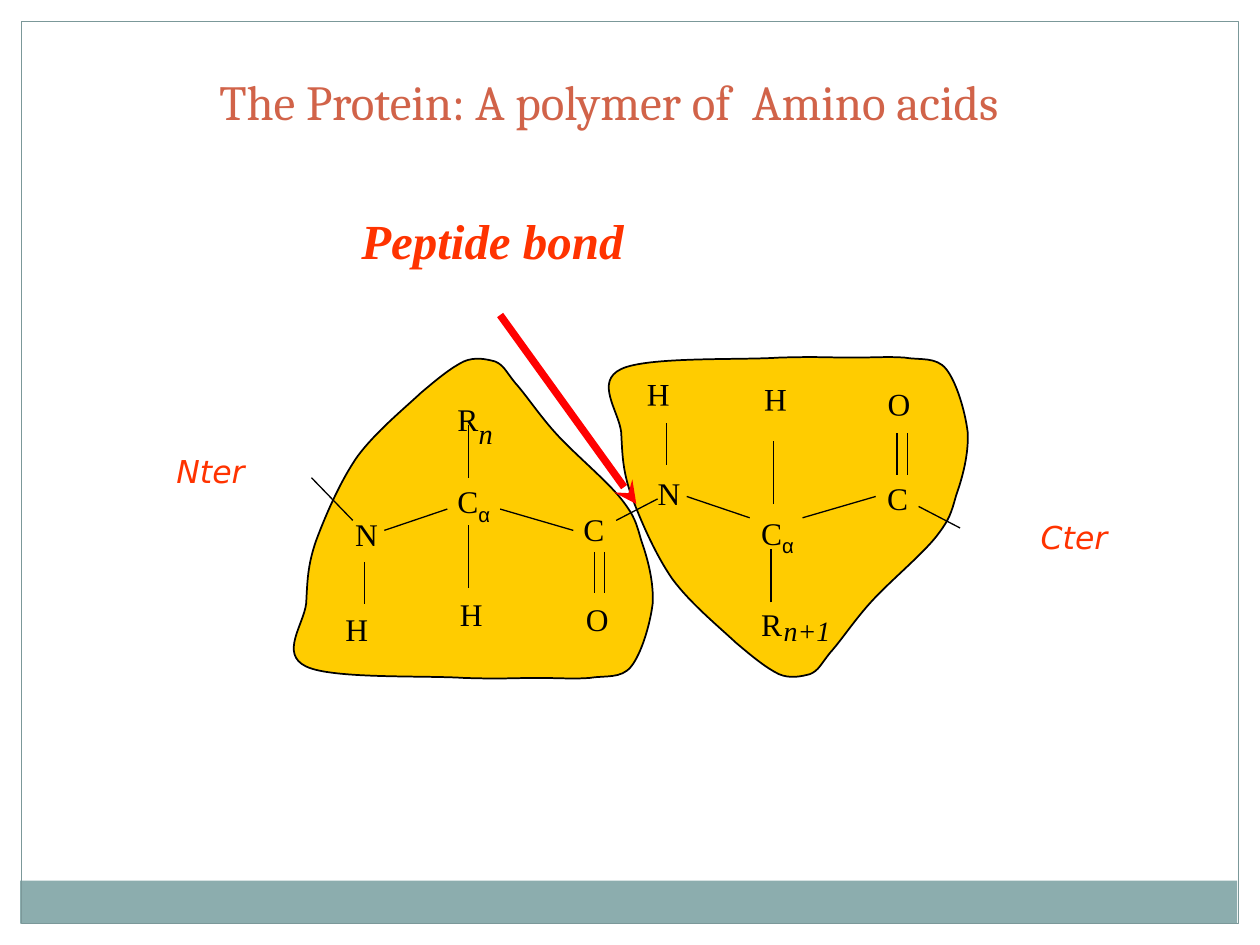
from pptx import Presentation
from pptx.dml.color import RGBColor
from pptx.enum import shapes, text
from pptx.oxml.ns import qn
from pptx.oxml.xmlchemy import OxmlElement
from pptx.util import Pt

TEAL = RGBColor(0x8C, 0xAD, 0xAE)
FRAME = RGBColor(0x7B, 0x98, 0x99)
RUST = RGBColor(0xD1, 0x63, 0x49)
GOLD = RGBColor(0xFF, 0xCC, 0x00)
RED = RGBColor(0xFF, 0x00, 0x00)
ORANGE = RGBColor(0xFF, 0x33, 0x00)
BLACK = RGBColor(0x00, 0x00, 0x00)
SERIF = "Times New Roman"

# Residue outline: a start point, then Bezier triples (control, control, end)
OUTLINE = [
    (265, 206.6),
    (257.8, 210.2), (250.6, 216), (240.5, 224.6),
    (230.4, 234), (214.6, 247), (204.5, 260.6),
    (194.4, 275), (185.8, 295.2), (180.7, 308.9),
    (175.7, 323.3), (175.7, 332.6), (175, 344.9),
    (173.5, 357.1), (159.8, 373.7), (175, 380.9),
    (190.1, 388.1), (242.6, 385.9), (265, 387.4),
    (286.6, 388.1), (294.5, 387.4), (306.7, 387.4),
    (319, 387.4), (327.6, 388.1), (337, 387.4),
    (345.6, 385.9), (355, 388.1), (360.7, 380.9),
    (366.5, 373.7), (371.5, 357.1), (373, 344.9),
    (373.7, 332.6), (370.1, 319), (366.5, 308.9),
    (363.6, 298.8), (362.9, 295.2), (355, 285.1),
    (347, 275), (329, 259.9), (319, 249.1),
    (308.9, 238.3), (301, 226.1), (294.5, 218.9),
    (288.7, 211.7), (288, 208.8), (283, 206.6),
    (277.9, 205.2), (271.4, 203.8), (265, 206.6),
]

# Bonds that both residues share
BONDS = [
    ((208.1, 321.1), (208.1, 344.9)),  # N-H
    ((219.6, 303.1), (255.6, 290.9)),  # N-Cα
    ((267.8, 242.6), (267.8, 272.9)),  # Cα-R
    ((285.8, 290.9), (327.6, 303.1)),  # Cα-C
    ((352.1, 297.4), (375.8, 285.1)),  # C-N
    ((339.8, 315.4), (339.8, 339.1)),  # C=O
    ((345.6, 315.4), (345.6, 339.1)),
]

# Atoms: text, left, top, rotation
ATOMS = [
    ("C", 329.8, 288, 0), ("N", 199.4, 290.9, 0), ("O", 331.2, 339.1, 0),
    ("H", 193.7, 344.9, 0), ("H", 259.2, 336.2, 0),
    ("C", 503.3, 270, 0), ("N", 372.2, 267.1, 0), ("R", 431.3, 342, 0),
    ("O", 503.3, 220.3, 180), ("H", 365.8, 214.6, 180), ("H", 432.7, 217.4, 180),
]


def flip(points, dx, y_sum):
    """Shift points right by dx and mirror them top to bottom."""
    return [(x + dx, y_sum - y) for x, y in points]


def add_rect(s, x, y, w, h, fill=None, line=None):
    sp = s.shapes.add_shape(shapes.MSO_SHAPE.RECTANGLE, Pt(x), Pt(y), Pt(w), Pt(h))
    sp.shadow.inherit = False
    if fill is None:
        sp.fill.background()
    else:
        sp.fill.solid()
        sp.fill.fore_color.rgb = fill
    if line is None:
        sp.line.fill.background()
    else:
        sp.line.color.rgb = line
        sp.line.width = Pt(0.75)


def add_blob(s, points):
    start, *rest = [(Pt(x), Pt(y)) for x, y in points]
    builder = s.shapes.build_freeform(*start)
    builder.add_line_segments(rest, close=True)
    sp = builder.convert_to_shape()
    sp.shadow.inherit = False
    sp.fill.solid()
    sp.fill.fore_color.rgb = GOLD
    sp.line.color.rgb = BLACK
    sp.line.width = Pt(1)
    # Turn each three segments into one Bezier curve
    segments = list(sp.element.iter(qn("a:lnTo")))
    for i in range(0, len(segments), 3):
        curve = OxmlElement("a:cubicBezTo")
        segments[i].addprevious(curve)
        for segment in segments[i:i + 3]:
            curve.append(segment[0])
            segment.getparent().remove(segment)


def add_line(s, start, end, color=BLACK, width=0.75, arrow=None):
    cx = s.shapes.add_connector(shapes.MSO_CONNECTOR.STRAIGHT,
                                *(Pt(v) for v in (*start, *end)))
    cx.line.color.rgb = color
    cx.line.width = Pt(width)
    if arrow:
        tail = OxmlElement("a:tailEnd")
        tail.set("type", arrow)
        cx.line._get_or_add_ln().append(tail)
    cx.element.spPr.append(OxmlElement("a:effectLst"))


def add_run(p, txt, size, font, color, bold=False, italic=False, sub=False):
    r = p.add_run()
    r.text = txt
    r.font.size = Pt(size)
    r.font.name = font
    r.font.color.rgb = color
    r.font.bold = bold
    r.font.italic = italic
    if sub:
        r.font._element.set("baseline", "-25000")


def add_text(s, txt, x, y, w=20.5, h=27.4, size=18, font=SERIF, color=BLACK,
             bold=False, italic=False, rotation=0, wrap=False, center=False, sub=None):
    """Add a text box; sub holds the format of a trailing subscript."""
    sp = s.shapes.add_textbox(Pt(x), Pt(y), Pt(w), Pt(h))
    sp.rotation = rotation
    tf = sp.text_frame
    tf.word_wrap = wrap
    tf.auto_size = text.MSO_AUTO_SIZE.SHAPE_TO_FIT_TEXT
    tf.margin_left = tf.margin_right = tf.margin_top = tf.margin_bottom = Pt(3.6)
    p = tf.paragraphs[0]
    if center:
        tf.vertical_anchor = text.MSO_ANCHOR.MIDDLE
        p.alignment = text.PP_ALIGN.CENTER
    add_run(p, txt, size, font, color, bold, italic)
    if sub:
        add_run(p, color=color, sub=True, **sub)


def main():
    prs = Presentation()
    prs.slide_width, prs.slide_height = Pt(720), Pt(540)
    s = prs.slides.add_slide(prs.slide_layouts[6])

    # Footer band, frame and title
    add_rect(s, 11.5, 503.3, 695.5, 24.5, fill=TEAL)
    add_rect(s, 12.2, 12.2, 695.5, 515.5, line=FRAME)
    add_text(s, "The Protein: A polymer of  Amino acids", 45.4, 38.2, 604.8, 38.9,
             size=28, font="Cambria", color=RUST, wrap=True, center=True)

    # Residues; the right one is the left one upside down
    add_blob(s, flip(OUTLINE, 180, 591.8))
    add_blob(s, OUTLINE)

    # Bonds
    for bond in BONDS:
        add_line(s, *bond)
        add_line(s, *flip(bond, 172.8, 586.8))
    add_line(s, (178, 273), (201.6, 297.4))
    add_line(s, (267.8, 300.2), (267.8, 336.2))
    add_line(s, (442.1, 288), (442.1, 252))

    # Atoms and side chains
    for atom, x, y, rotation in ATOMS:
        add_text(s, atom, x, y, rotation=rotation)
    alpha = dict(txt="α", size=20, font="Arial")
    for x, y in ((257.8, 270), (431.3, 288)):
        add_text(s, "C", x, y, 28.8, 33.1, sub=alpha)
    add_text(s, "R", 257.8, 215.3, 29.5, 43.2,
             sub=dict(txt="n", size=28, font=SERIF, italic=True))
    add_text(s, "n+1", 444.2, 347, 35.3, 24.5, size=16, italic=True)

    # Peptide bond arrow and annotations
    add_line(s, (285.8, 180), (363.6, 288), color=RED, width=4.25, arrow="stealth")
    add_text(s, "Peptide bond", 202.9, 116.6, 158.4, 38.2, size=28, color=ORANGE,
             bold=True, italic=True)
    for end, x, y in (("Nter", 97.2, 254.9), ("Cter", 591.1, 292.3)):
        add_text(s, end, x, y, 46.8, 29.5, font="DejaVu Sans", color=ORANGE, italic=True)

    prs.save("out.pptx")


if __name__ == "__main__":
    main()
